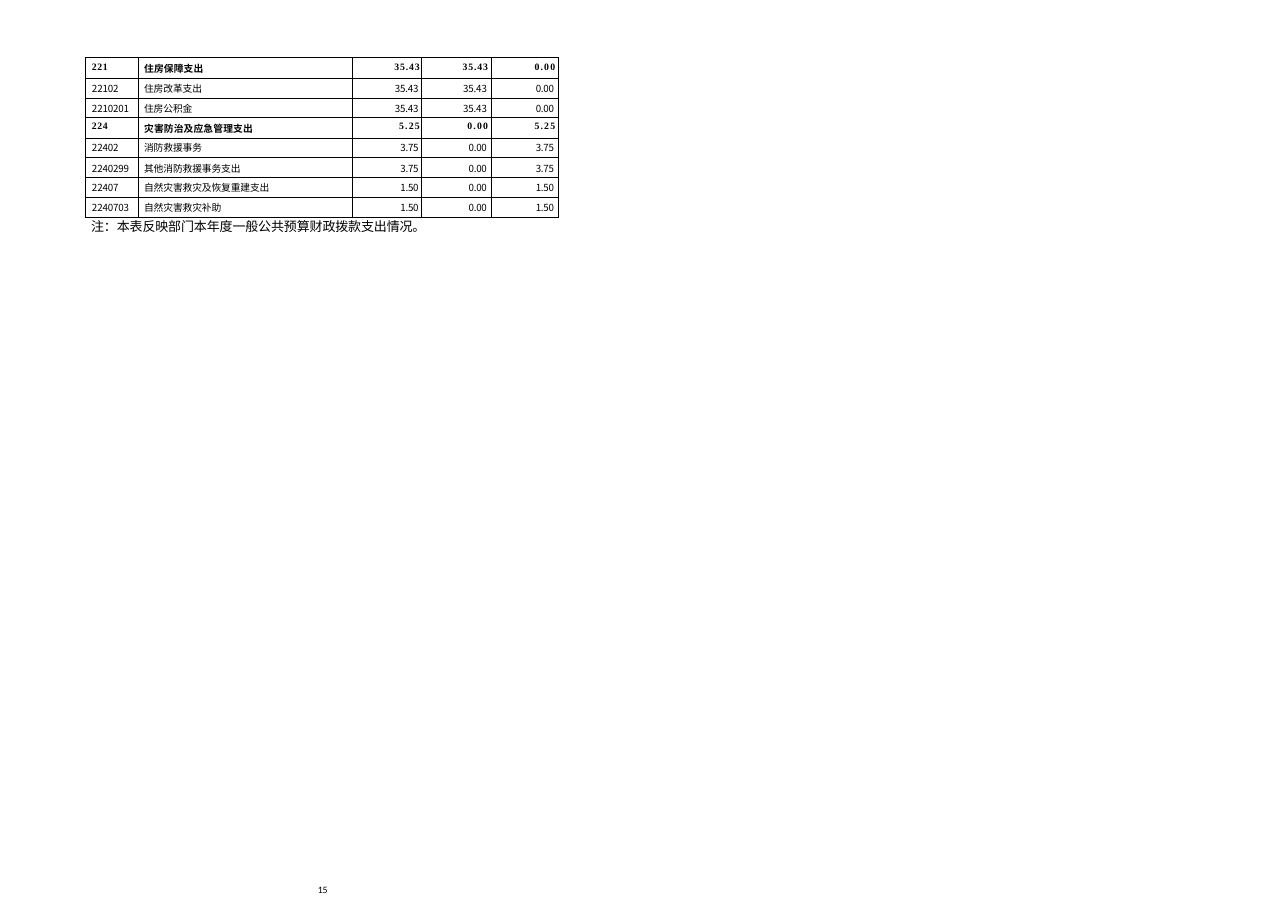
from lxml import etree
from pptx import Presentation
from pptx.enum import text
from pptx.oxml import ns
from pptx.util import Pt

COLORS = {"ink": "000000"}
SANS, SANS_BOLD, SERIF = "Noto Sans CJK SC", "Noto Sans CJK TC", "Times New Roman"

ROWS = [
    ("221", "住房保障支出", "35.43", "35.43", "0.00"),
    ("22102", "住房改革支出", "35.43", "35.43", "0.00"),
    ("2210201", "住房公积金", "35.43", "35.43", "0.00"),
    ("224", "灾害防治及应急管理支出", "5.25", "0.00", "5.25"),
    ("22402", "消防救援事务", "3.75", "0.00", "3.75"),
    ("2240299", "其他消防救援事务支出", "3.75", "0.00", "3.75"),
    ("22407", "自然灾害救灾及恢复重建支出", "1.50", "0.00", "1.50"),
    ("2240703", "自然灾害救灾补助", "1.50", "0.00", "1.50"),
]
COLUMN_WIDTHS = [48.2, 198, 64.1, 64.1, 62.6]
ROW_HEIGHTS = [18.7, 18.7, 18, 18.7, 18, 18.7, 18, 18.7]
RIGHT_MARGINS = [0, 0, 2.7, 3.7, 4.2]


def add_run(paragraph, words, font, size, spacing, bold=False):
    """Add a run with one typeface for all scripts and letter spacing in points."""
    run = paragraph.add_run()
    run.text = words
    run.font.size = Pt(size)
    run.font.bold = bold
    run.font.name = font
    run.font.color.rgb = RGBColor.from_string(COLORS["ink"])
    properties = run.font._element
    properties.set("spc", str(round(spacing * 100)))
    east_asian = etree.SubElement(properties, ns.qn("a:ea"))
    east_asian.set("typeface", font)


def add_borders(cell):
    properties = cell._tc.get_or_add_tcPr()
    for position, side in enumerate(("lnL", "lnR", "lnT", "lnB")):
        line = etree.Element(ns.qn(f"a:{side}"), w=str(Pt(0.75)))
        fill = etree.SubElement(line, ns.qn("a:solidFill"))
        etree.SubElement(fill, ns.qn("a:srgbClr"), val=COLORS["ink"])
        properties.insert(position, line)


from pptx.dml.color import RGBColor

presentation = Presentation()
presentation.slide_width = Pt(1190.16)
presentation.slide_height = Pt(842.4)
slide = presentation.slides.add_slide(presentation.slide_layouts[6])

# Expenditure table
frame = slide.shapes.add_table(
    len(ROWS), len(COLUMN_WIDTHS), Pt(79.2), Pt(53.3),
    Pt(sum(COLUMN_WIDTHS)), Pt(sum(ROW_HEIGHTS)))
table = frame.table
table.first_row = False
table.horz_banding = False
for column, width in zip(table.columns, COLUMN_WIDTHS):
    column.width = Pt(width)

for row_index, (values, height) in enumerate(zip(ROWS, ROW_HEIGHTS)):
    table.rows[row_index].height = Pt(height)
    is_category = len(values[0]) == 3
    for column_index, value in enumerate(values):
        cell = table.cell(row_index, column_index)
        is_amount = column_index >= 2
        cell.fill.background()
        add_borders(cell)
        cell.margin_left = Pt(0 if is_amount else 5.8)
        cell.margin_right = Pt(RIGHT_MARGINS[column_index] - (is_category and is_amount))
        cell.margin_top = Pt(3.4 if height > 18 else 2.6)
        cell.margin_bottom = 0
        paragraph = cell.text_frame.paragraphs[0]
        if is_amount:
            paragraph.alignment = text.PP_ALIGN.RIGHT
            spacing = -0.1 if len(value) == 5 else -0.2
            if is_category:
                spacing = 0.8 if len(value) == 5 else 1.1
        else:
            spacing = (0.5, 0.15)[column_index] if is_category else -0.1
        font = SANS
        if is_category:
            font = SANS_BOLD if column_index == 1 else SERIF
        add_run(paragraph, value, font, 9, spacing, is_category)

# Page number and note below the table
LABELS = [
    ("15", "Calibri", 9, -0.2, (290.9, 817.2, 15.8, 10.8), 2.9, 0, 9.6),
    ("注：本表反映部门本年度一般公共预算财政拨款支出情况。", SANS, 12, -0.1,
     (83.5, 200.9, 314.6, 16.6), 0.7, 1, None),
]
for words, font, size, spacing, box, left, top, line_height in LABELS:
    label = slide.shapes.add_textbox(*map(Pt, box)).text_frame
    label.word_wrap = True
    label.margin_left, label.margin_top = Pt(left), Pt(top)
    label.margin_right = label.margin_bottom = 0
    paragraph = label.paragraphs[0]
    if line_height:
        paragraph.line_spacing = Pt(line_height)
    add_run(paragraph, words, font, size, spacing)

presentation.save("out.pptx")
